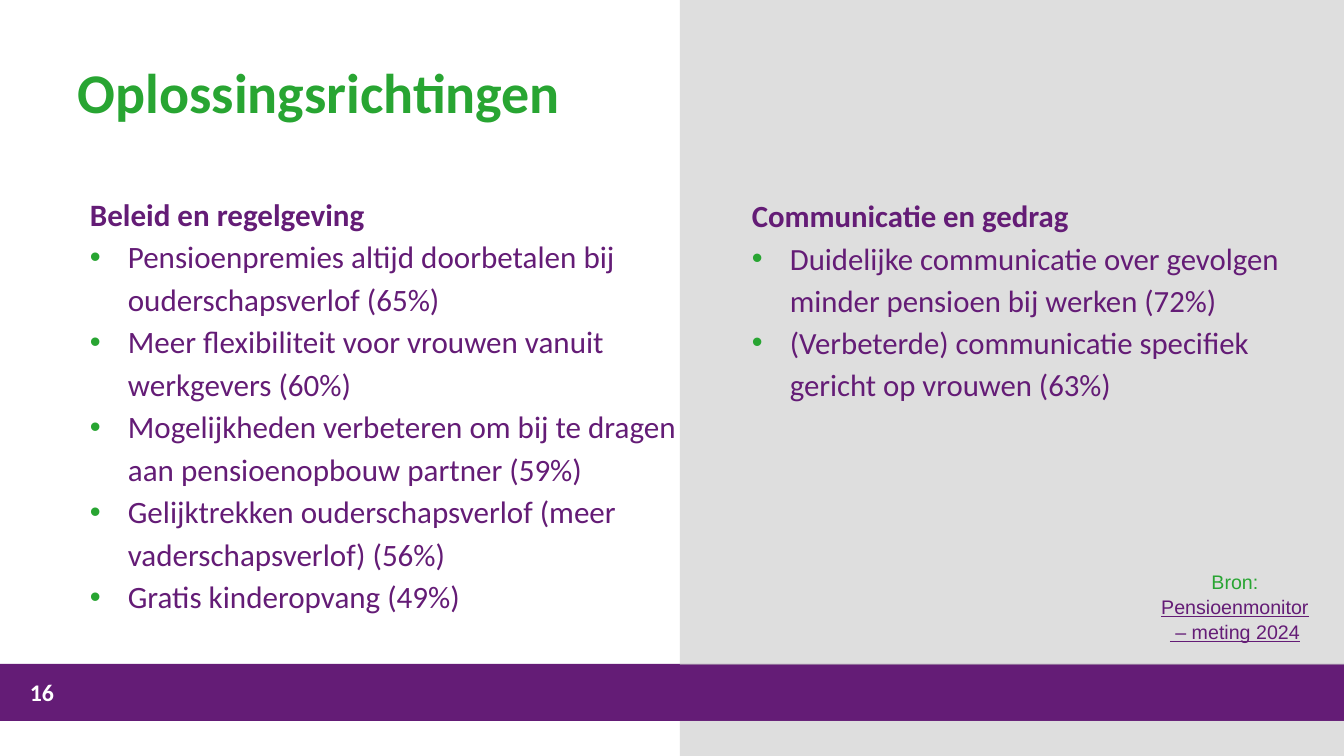
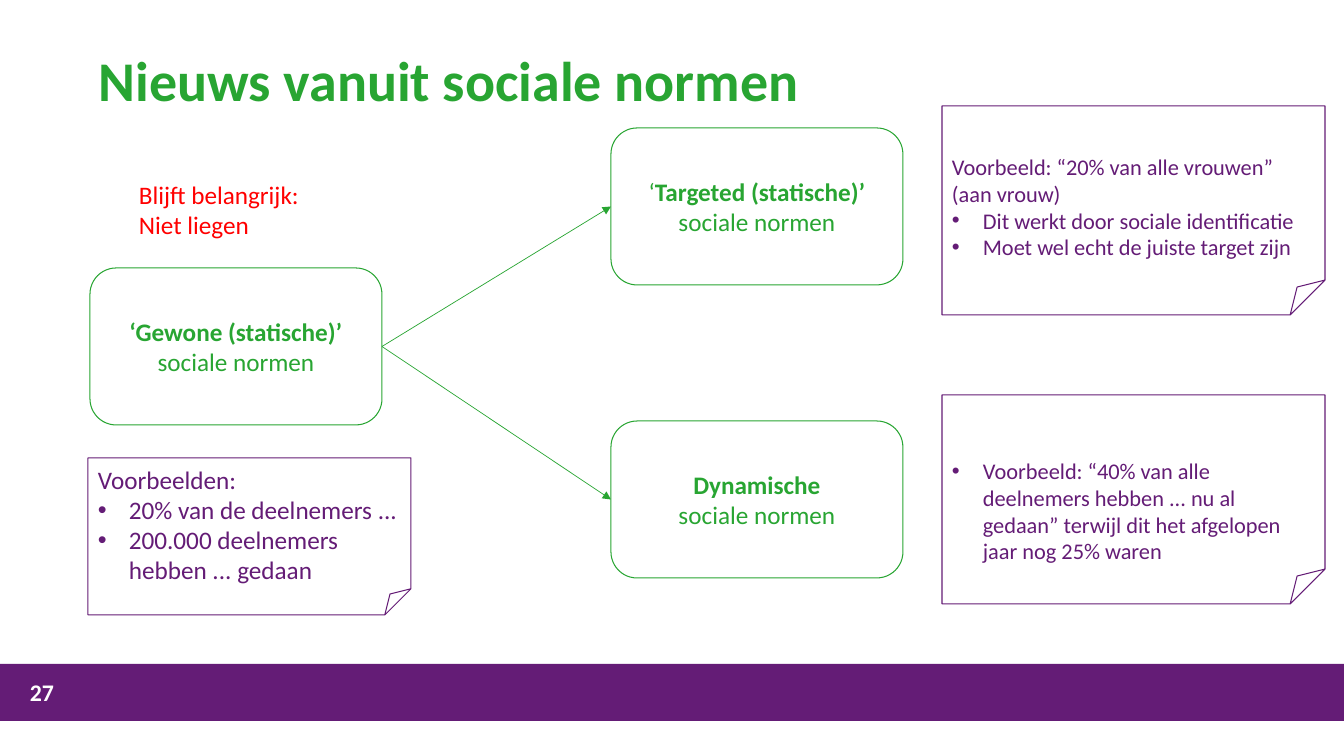
"""Build two slides on pension solutions and social norms."""
import lxml.etree
import pptx
import pptx.dml.color
import pptx.enum.shapes
import pptx.enum.text
import pptx.oxml.ns
import pptx.util

PX = 914400 / 100.8
SLIDE_WIDTH, SLIDE_HEIGHT = 1344, 756
BAND_TOP, BAND_HEIGHT = 664, 57

GREEN = pptx.dml.color.RGBColor(0x28, 0xA5, 0x32)
PURPLE = pptx.dml.color.RGBColor(0x64, 0x1C, 0x76)
GREY = pptx.dml.color.RGBColor(0xBF, 0xBF, 0xBF)
WHITE = pptx.dml.color.RGBColor(0xFF, 0xFF, 0xFF)
RED = pptx.dml.color.RGBColor(0xFF, 0x00, 0x00)

SHAPES = pptx.enum.shapes.MSO_SHAPE
ANCHOR = pptx.enum.text.MSO_ANCHOR
ALIGN = pptx.enum.text.PP_ALIGN


def emu(*lengths):
    """Turn pixel lengths into EMU."""
    return [pptx.util.Emu(round(length * PX)) for length in lengths]


def add_element(parent, tag, **attributes):
    """Append a DrawingML element to a parent."""
    return lxml.etree.SubElement(parent, pptx.oxml.ns.qn(tag), attributes)


def set_indent(paragraph, left, hanging=0, bullet_color=None):
    """Indent a paragraph, with a bullet when it hangs."""
    properties = paragraph._p.get_or_add_pPr()
    properties.set("marL", str(emu(left)[0]))
    properties.set("indent", str(emu(-hanging)[0]))
    if hanging:
        if bullet_color is not None:
            color = add_element(properties, "a:buClr")
            add_element(color, "a:srgbClr", val=str(bullet_color))
        add_element(properties, "a:buFont", typeface="Arial")
        add_element(properties, "a:buChar", char="•")


def add_run(paragraph, text, size, color, bold=False, font="Calibri", underline=False):
    """Add one formatted run."""
    run = paragraph.add_run()
    run.text = text
    run.font.name = font
    run.font.size = pptx.util.Pt(size)
    run.font.bold = bold
    run.font.underline = underline
    run.font.color.rgb = color


def add_paragraph(frame, align=ALIGN.LEFT, line_spacing=None):
    """Return the next free paragraph of a text frame."""
    paragraph = frame.paragraphs[0]
    if paragraph.runs:
        paragraph = frame.add_paragraph()
    paragraph.alignment = align
    if line_spacing:
        paragraph.line_spacing = line_spacing
    return paragraph


def add_text_frame(slide, box, anchor=ANCHOR.TOP, wrap=True):
    """Add a text box and return its frame."""
    frame = slide.shapes.add_textbox(*emu(*box)).text_frame
    frame.word_wrap = wrap
    frame.vertical_anchor = anchor
    return frame


def add_shape(slide, kind, box, fill=None, line=None):
    """Add a flat preset shape."""
    shape = slide.shapes.add_shape(kind, *emu(*box))
    shape.shadow.inherit = False
    if fill is None:
        shape.fill.background()
    else:
        shape.fill.solid()
        shape.fill.fore_color.rgb = fill
    if line is None:
        shape.line.fill.background()
    else:
        shape.line.color.rgb = line
        shape.line.width = pptx.util.Pt(0.75)
    return shape


def add_base_slide(presentation, number, title, title_box):
    """Add a slide with its band, page number and title."""
    slide = presentation.slides.add_slide(presentation.slide_layouts[6])
    add_shape(slide, SHAPES.RECTANGLE, (0, BAND_TOP, SLIDE_WIDTH, BAND_HEIGHT), PURPLE)
    frame = add_text_frame(slide, (20, BAND_TOP + 7, 75, 40), ANCHOR.BOTTOM)
    add_run(add_paragraph(frame), number, 17, WHITE, True)
    frame = add_text_frame(slide, title_box)
    add_run(add_paragraph(frame, line_spacing=0.9), title, 40, GREEN, True)
    return slide


def add_grey_panel(slide, left):
    """Shade the right side above and below the band."""
    band_bottom = BAND_TOP + BAND_HEIGHT
    for top, bottom in ((0, BAND_TOP + 1), (band_bottom, SLIDE_HEIGHT)):
        box = (left, top, SLIDE_WIDTH - left, bottom - top)
        panel = add_shape(slide, SHAPES.RECTANGLE, box, GREY)
        color = panel.fill._xPr.find(".//" + pptx.oxml.ns.qn("a:srgbClr"))
        add_element(color, "a:alpha", val="50000")


def add_solution_list(slide, box, heading, items, size):
    """Add a heading with green bullets."""
    frame = add_text_frame(slide, box)
    paragraph = add_paragraph(frame, line_spacing=1.14)
    set_indent(paragraph, 12)
    add_run(paragraph, heading, size, PURPLE, True)
    for item in items:
        paragraph = add_paragraph(frame, line_spacing=1.14)
        set_indent(paragraph, 50, 38, GREEN)
        add_run(paragraph, item, size, PURPLE)


def add_source(slide, box):
    """Add the centred source reference."""
    frame = add_text_frame(slide, box, ANCHOR.BOTTOM)
    lines = (("Bron:", GREEN, False), ("Pensioenmonitor", PURPLE, True), (" – meting 2024", PURPLE, True))
    for text, color, underline in lines:
        paragraph = add_paragraph(frame, ALIGN.CENTER, 1.05)
        add_run(paragraph, text, 14, color, font="Arial", underline=underline)


def add_norm_box(slide, left, top, name_runs):
    """Add a rounded box naming a kind of social norm."""
    shape = add_shape(slide, SHAPES.ROUNDED_RECTANGLE, (left, top, 292, 157), line=GREEN)
    frame = shape.text_frame
    frame.word_wrap = True
    frame.vertical_anchor = ANCHOR.MIDDLE
    paragraph = add_paragraph(frame, ALIGN.CENTER)
    for text, bold in name_runs:
        add_run(paragraph, text, 18, GREEN, bold)
    add_run(add_paragraph(frame, ALIGN.CENTER), "sociale normen", 18, GREEN)
    return shape


def add_note(slide, box, text_top, size, intro, bullets):
    """Add a folded note with an optional intro and bullets."""
    frame = add_shape(slide, SHAPES.FOLDED_CORNER, box, line=PURPLE).text_frame
    frame.word_wrap = True
    frame.vertical_anchor = ANCHOR.TOP
    frame.margin_top = emu(text_top)[0]
    if intro:
        add_run(add_paragraph(frame), intro, size, PURPLE)
    for bullet in bullets:
        paragraph = add_paragraph(frame)
        set_indent(paragraph, 31, 31)
        add_run(paragraph, bullet, size, PURPLE)


def add_arrow(slide, source, target):
    """Join the right of one box to the left of another."""
    kind = pptx.enum.shapes.MSO_CONNECTOR.STRAIGHT
    arrow = slide.shapes.add_connector(kind, 0, 0, 0, 0)
    arrow.begin_connect(source, 3)
    arrow.end_connect(target, 1)
    arrow.line.color.rgb = GREEN
    arrow.line.width = pptx.util.Pt(0.5)
    add_element(arrow.line._get_or_add_ln(), "a:tailEnd", type="triangle")
    add_element(arrow._element.spPr, "a:effectLst")


def build_solutions_slide(presentation):
    """Build the slide with two lists of solutions."""
    slide = add_base_slide(presentation, "16", "Oplossingsrichtingen", (68, 60, 565, 80))
    add_solution_list(slide, (68, 185, 628, 430), "Beleid en regelgeving", (
        "Pensioenpremies altijd doorbetalen bij ouderschapsverlof (65%)",
        "Meer flexibiliteit voor vrouwen vanuit werkgevers (60%)",
        "Mogelijkheden verbeteren om bij te dragen aan pensioenopbouw partner (59%)",
        "Gelijktrekken ouderschapsverlof (meer vaderschapsverlof) (56%)",
        "Gratis kinderopvang (49%)",
    ), 22.2)
    add_grey_panel(slide, 680)
    add_solution_list(slide, (730, 187, 609, 430), "Communicatie en gedrag", (
        "Duidelijke communicatie over gevolgen minder pensioen bij werken (72%)",
        "(Verbeterde) communicatie specifiek gericht op vrouwen (63%)",
    ), 22)
    add_source(slide, (1149, 568, 172, 80))


def build_norms_slide(presentation):
    """Build the diagram of social norms."""
    slide = add_base_slide(presentation, "27", "Nieuws vanuit sociale normen", (89, 48, 1178, 112))
    targeted = add_norm_box(slide, 611, 128, (("‘", False), ("Targeted (statische)’", True)))
    dynamic = add_norm_box(slide, 611, 421, (("Dynamische", True),))
    ordinary = add_norm_box(slide, 90, 268, (("‘Gewone (statische)’", True),))
    for target in (targeted, dynamic):
        add_arrow(slide, ordinary, target)
    add_note(slide, (88, 458, 323, 157), 6, 18, "Voorbeelden:", (
        "20% van de deelnemers ...",
        "200.000 deelnemers hebben ... gedaan",
    ))
    add_note(slide, (942, 106, 383, 209), 47, 16, "Voorbeeld: “20% van alle vrouwen” (aan vrouw)", (
        "Dit werkt door sociale identificatie",
        "Moet wel echt de juiste target zijn",
    ))
    add_note(slide, (942, 395, 383, 209), 62, 16, None, (
        "Voorbeeld: “40% van alle deelnemers hebben ... nu al gedaan” "
        "terwijl dit het afgelopen jaar nog 25% waren",
    ))
    frame = add_text_frame(slide, (129, 158, 180, 87), ANCHOR.BOTTOM, wrap=False)
    for text in ("Blijft belangrijk:", "Niet liegen"):
        add_run(add_paragraph(frame), text, 18, RED)


def main():
    """Build and save the presentation."""
    presentation = pptx.Presentation()
    presentation.slide_width, presentation.slide_height = emu(SLIDE_WIDTH, SLIDE_HEIGHT)
    build_solutions_slide(presentation)
    build_norms_slide(presentation)
    presentation.save("out.pptx")


if __name__ == "__main__":
    main()
